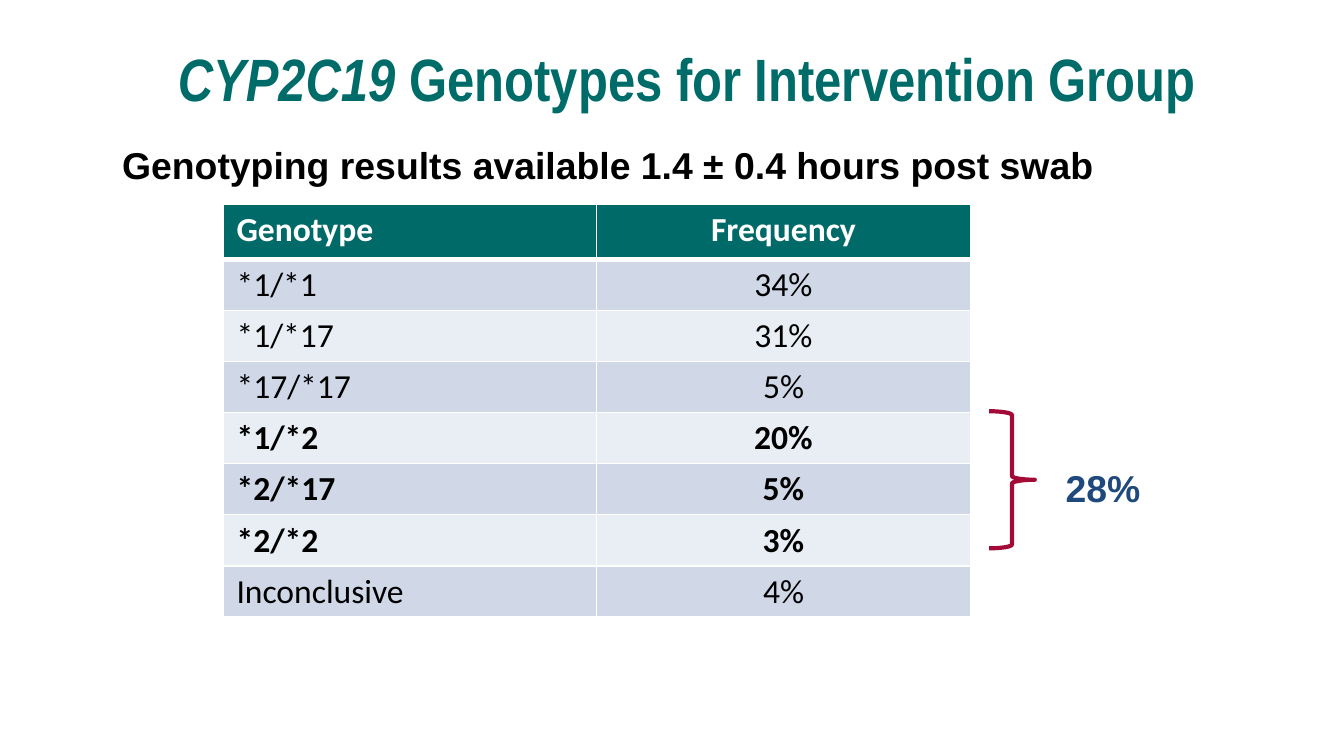
"""Build a slide tabulating CYP2C19 genotype frequencies for the intervention group."""
from lxml import etree
from pptx import Presentation
from pptx import util as u
from pptx.dml.color import RGBColor
from pptx.enum import shapes, text
from pptx.oxml.ns import qn

TEAL = RGBColor(0x00, 0x6C, 0x69)
HEADER = RGBColor(0x00, 0x6A, 0x68)
BANDS = RGBColor(0xD0, 0xD8, 0xE8), RGBColor(0xE9, 0xED, 0xF4)
CRIMSON = RGBColor(0xA3, 0x0A, 0x36)
NAVY = RGBColor(0x1F, 0x49, 0x7D)
BLACK = RGBColor(0, 0, 0)
WHITE = RGBColor(255, 255, 255)

TITLE = [("CYP2C19", True), (" Genotypes for Intervention Group", False)]
FINDING = [("Genotyping results available 1.4 ± 0.4 hours post swab", False)]
COMBINED = [("28%", False)]
GENOTYPES = [
    ("Genotype", "Frequency"),
    ("*1/*1", "34%"),
    ("*1/*17", "31%"),
    ("*17/*17", "5%"),
    ("*1/*2", "20%"),
    ("*2/*17", "5%"),
    ("*2/*2", "3%"),
    ("Inconclusive", "4%"),
]
BOLD_ROWS = {0, 4, 5, 6}
SLIDE_WIDTH = 10
SLIDE_HEIGHT = SLIDE_WIDTH * 9 / 16
TABLE_LEFT, TABLE_TOP, COLUMN = 1.66, 1.52, 2.78
HEADER_HEIGHT, ROW_HEIGHT = 0.41, 0.38


def inches(*lengths):
    return [u.Inches(length) for length in lengths]


def style(font, name, size, color, bold=True, italic=False):
    font.name, font.size, font.bold, font.italic = name, u.Pt(size), bold, italic
    font.color.rgb = color


def add_label(slide, place, runs, name, size, color, align=text.PP_ALIGN.LEFT,
              anchor=text.MSO_ANCHOR.TOP):
    frame = slide.shapes.add_textbox(*inches(*place)).text_frame
    frame.word_wrap = True
    frame.vertical_anchor = anchor
    paragraph = frame.paragraphs[0]
    paragraph.alignment = align
    for words, italic in runs:
        run = paragraph.add_run()
        run.text = words
        style(run.font, name, size, color, italic=italic)


def add_borders(cell, widths):
    properties = cell._tc.get_or_add_tcPr()
    for side, width in widths.items():
        line = etree.SubElement(properties, qn(f"a:ln{side}"), w=str(u.Pt(width)))
        fill = etree.SubElement(line, qn("a:solidFill"))
        etree.SubElement(fill, qn("a:srgbClr"), val=str(WHITE))


def add_genotypes(slide):
    rows, columns = len(GENOTYPES), len(GENOTYPES[0])
    height = HEADER_HEIGHT + ROW_HEIGHT * (rows - 1)
    place = inches(TABLE_LEFT, TABLE_TOP, COLUMN * columns, height)
    table = slide.shapes.add_table(rows, columns, *place).table
    for r, values in enumerate(GENOTYPES):
        table.rows[r].height = u.Inches(ROW_HEIGHT if r else HEADER_HEIGHT)
        for c, value in enumerate(values):
            cell = table.cell(r, c)
            add_borders(cell, {"L": 1, "R": 1, "T": 3 if r == 1 else 1, "B": 1 if r else 3})
            cell.fill.solid()
            cell.fill.fore_color.rgb = BANDS[(r - 1) % 2] if r else HEADER
            cell.margin_top = cell.margin_bottom = u.Inches(0.04)
            paragraph = cell.text_frame.paragraphs[0]
            paragraph.text = value
            paragraph.alignment = text.PP_ALIGN.CENTER if c else text.PP_ALIGN.LEFT
            style(paragraph.runs[0].font, "Calibri", 18, BLACK if r else WHITE, r in BOLD_ROWS)


def add_brace(slide):
    brace = slide.shapes.add_shape(shapes.MSO_SHAPE.RIGHT_BRACE, *inches(7.36, 3.06, 0.34, 1.02))
    brace.adjustments[0] = 0.083
    brace.shadow.inherit = False
    brace.fill.background()
    brace.line.color.rgb = CRIMSON
    brace.line.width = u.Pt(2.25)


def main():
    deck = Presentation()
    deck.slide_width, deck.slide_height = inches(SLIDE_WIDTH, SLIDE_HEIGHT)
    slide = deck.slides.add_slide(deck.slide_layouts[6])
    add_label(slide, (0.5, 0.15, 9.23, 0.86), TITLE, "Arial Narrow", 32, TEAL,
              text.PP_ALIGN.CENTER, text.MSO_ANCHOR.MIDDLE)
    add_genotypes(slide)
    add_brace(slide)
    add_label(slide, (7.83, 3.41, 1.43, 0.44), COMBINED, "Arial", 20, NAVY)
    add_label(slide, (0.81, 1.01, 7.91, 0.44), FINDING, "Arial", 20, BLACK)
    deck.save("out.pptx")


if __name__ == "__main__":
    main()
